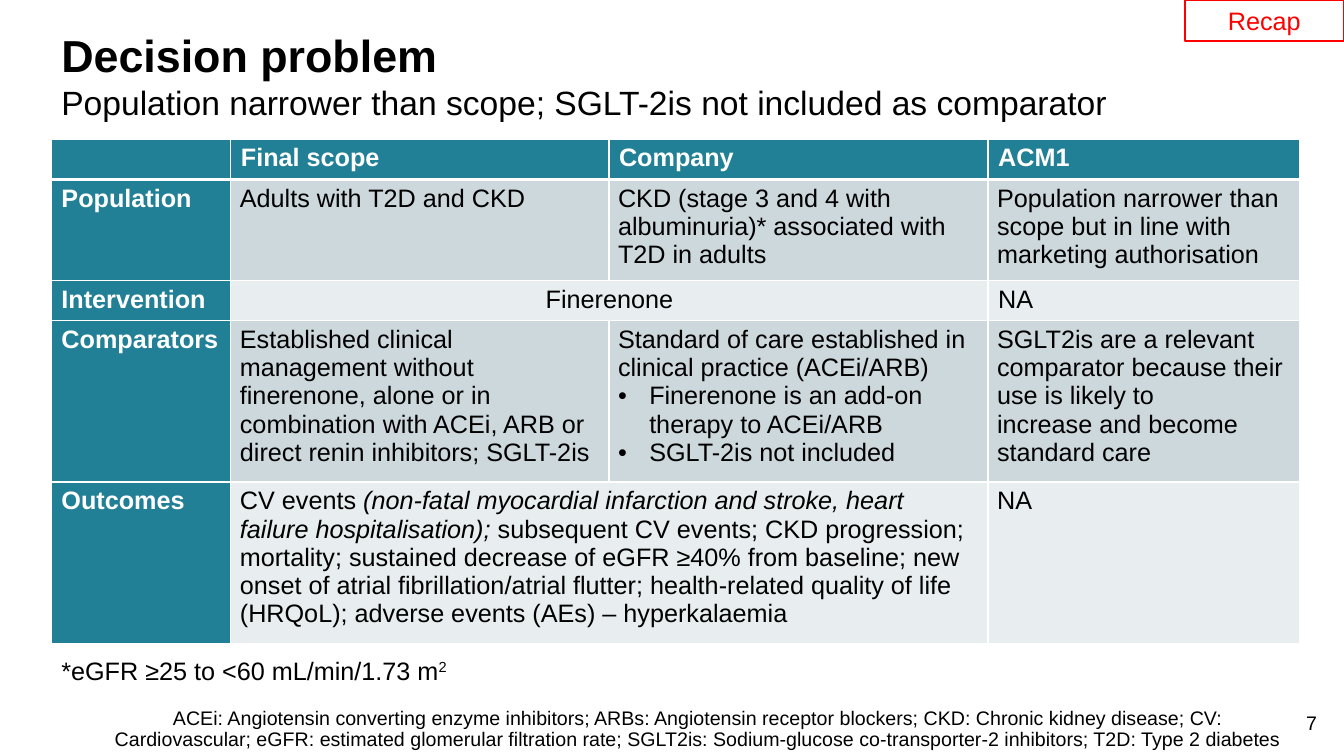
from lxml.etree import SubElement as Sub
from pptx import Presentation
from pptx.dml.color import RGBColor
from pptx.enum.shapes import MSO_SHAPE as Shape
from pptx.enum.text import MSO_ANCHOR as Anchor, PP_ALIGN as Align
from pptx.oxml.ns import qn
from pptx.util import Inches, Pt

TEAL = RGBColor(0x22, 0x80, 0x96)
DARK = RGBColor(0xCD, 0xD8, 0xDD)
PALE = RGBColor(0xE8, 0xED, 0xEF)
WHITE = RGBColor(0xFF, 0xFF, 0xFF)
BLACK = RGBColor(0, 0, 0)
RED = RGBColor(0xFF, 0, 0)

COLS = [1.78, 3.75, 3.76, 3.09]
ROWS = [0.38, 0.93, 0.38, 1.49, 1.49]
BULLET = "• "

# One list of paragraphs per cell; None continues the cell to its left.
# Text between underscores is italic.
CELLS = [
    [[""], ["Final scope"], ["Company"], ["ACM1"]],
    [["Population"],
     ["Adults with T2D and CKD"],
     ["CKD (stage 3 and 4 with albuminuria)* associated with T2D in adults"],
     ["Population narrower than scope but in line with marketing "
      "authorisation"]],
    [["Intervention"], ["Finerenone"], None, ["NA"]],
    [["Comparators"],
     ["Established clinical management without finerenone, alone or in "
      "combination with ACEi, ARB or direct renin inhibitors; SGLT-2is"],
     ["Standard of care established in clinical practice (ACEi/ARB)",
      "• Finerenone is an add-on therapy to ACEi/ARB",
      "• SGLT-2is not included"],
     ["SGLT2is are a relevant comparator because their use is likely to",
      "increase and become standard care"]],
    [["Outcomes"],
     ["CV events _(non-fatal myocardial infarction and stroke, heart failure "
      "hospitalisation); _subsequent CV events; CKD progression; mortality; "
      "sustained decrease of eGFR ≥40% from baseline; new onset of atrial "
      "fibrillation/atrial flutter; health-related quality of life (HRQoL); "
      "adverse events (AEs) – hyperkalaemia"],
     None, ["NA"]],
]


def style(font, size, color, bold=False):
    font.name = "Arial"
    font.size = Pt(size)
    font.color.rgb = color
    font.bold = bold


def add_text(slide, box, text, size, align=Align.LEFT, anchor=Anchor.TOP,
             bold=False, tight=False):
    frame = slide.shapes.add_textbox(*map(Inches, box)).text_frame
    frame.word_wrap = True
    frame.vertical_anchor = anchor
    frame.text = text
    para = frame.paragraphs[0]
    para.alignment = align
    if tight:
        para.line_spacing = 0.9
    style(para.runs[0].font, size, BLACK, bold)
    return para


def add_badge(slide, box, text):
    badge = slide.shapes.add_shape(Shape.RECTANGLE, *map(Inches, box))
    badge.shadow.inherit = False
    badge.fill.solid()
    badge.fill.fore_color.rgb = WHITE
    badge.line.color.rgb = RED
    badge.line.width = Pt(1.5)
    frame = badge.text_frame
    frame.text = text
    frame.vertical_anchor = Anchor.MIDDLE
    frame.paragraphs[0].alignment = Align.CENTER
    style(frame.paragraphs[0].runs[0].font, 18, RED)


def set_edges(cell, widths):
    props = cell._tc.get_or_add_tcPr()
    for side, width in zip("LRTB", widths):
        edge = Sub(props, qn(f"a:ln{side}"), w=str(Pt(width)))
        fill = Sub(edge, qn("a:solidFill"))
        Sub(fill, qn("a:srgbClr"), val=str(WHITE))


def set_bullet(para):
    props = para._p.get_or_add_pPr()
    props.set("marL", str(Inches(0.31)))
    props.set("indent", str(-Inches(0.31)))
    Sub(props, qn("a:buFont"), typeface="Arial")
    Sub(props, qn("a:buChar"), char=BULLET.strip())


def fill_cell(cell, texts, color, head):
    cell.fill.solid()
    cell.fill.fore_color.rgb = color
    frame = cell.text_frame
    for i, text in enumerate(texts):
        para = frame.add_paragraph() if i else frame.paragraphs[0]
        if text.startswith(BULLET):
            set_bullet(para)
        for j, part in enumerate(text.removeprefix(BULLET).split("_")):
            run = para.add_run()
            run.text = part
            style(run.font, 18, WHITE if head else BLACK, head)
            run.font.italic = j % 2 == 1


def add_grid(slide, left, top):
    frame = slide.shapes.add_table(
        len(ROWS), len(COLS), Inches(left), Inches(top),
        Inches(sum(COLS)), Inches(sum(ROWS)))
    table = frame.table
    for col, width in zip(table.columns, COLS):
        col.width = Inches(width)
    for row, height in zip(table.rows, ROWS):
        row.height = Inches(height)
    for r, line in enumerate(CELLS):
        for c, texts in enumerate(line):
            cell = table.cell(r, c)
            set_edges(cell, [1, 1, 3 if r == 1 else 1, 1 if r else 3])
            if texts is None:
                table.cell(r, c - 1).merge(cell)
                continue
            head = r == 0 or c == 0
            color = TEAL if head else DARK if r % 2 else PALE
            fill_cell(cell, texts, color, head)
            if not head and r != 2:
                cell.margin_left = cell.margin_right = Inches(0.09)
    table.cell(2, 1).text_frame.paragraphs[0].alignment = Align.CENTER


def main():
    deck = Presentation()
    deck.slide_width = Inches(13.33)
    deck.slide_height = Inches(7.5)
    slide = deck.slides.add_slide(deck.slide_layouts[6])

    # Page number and table
    add_text(slide, (12.65, 7, 0.51, 0.4), "7", 14, Align.RIGHT)
    add_grid(slide, 0.51, 1.38)

    # Headings and badge
    add_text(slide, (0.51, 0.29, 12.3, 0.65), "Decision problem", 32,
             bold=True, tight=True)
    add_text(slide, (0.51, 0.81, 12.3, 0.57),
             "Population narrower than scope; SGLT-2is not included as "
             "comparator", 24, tight=True)
    add_badge(slide, (11.75, 0, 1.58, 0.41), "Recap")

    # Abbreviations and footnote
    add_text(slide, (1.03, 6.93, 11.79, 0.57),
             "ACEi: Angiotensin converting enzyme inhibitors; ARBs: "
             "Angiotensin receptor blockers; CKD: Chronic kidney disease; "
             "CV: Cardiovascular; eGFR: estimated glomerular filtration rate; "
             "SGLT2is: Sodium-glucose co-transporter-2 inhibitors; "
             "T2D: Type 2 diabetes",
             14, Align.CENTER, Anchor.BOTTOM, tight=True)
    note = add_text(slide, (0.51, 6.45, 6.67, 0.4),
                    "*eGFR ≥25 to <60 mL/min/1.73 m", 18)
    power = note.add_run()
    power.text = "2"
    style(power.font, 18, BLACK)
    power._r.get_or_add_rPr().set("baseline", "30000")

    deck.save("out.pptx")


if __name__ == "__main__":
    main()
